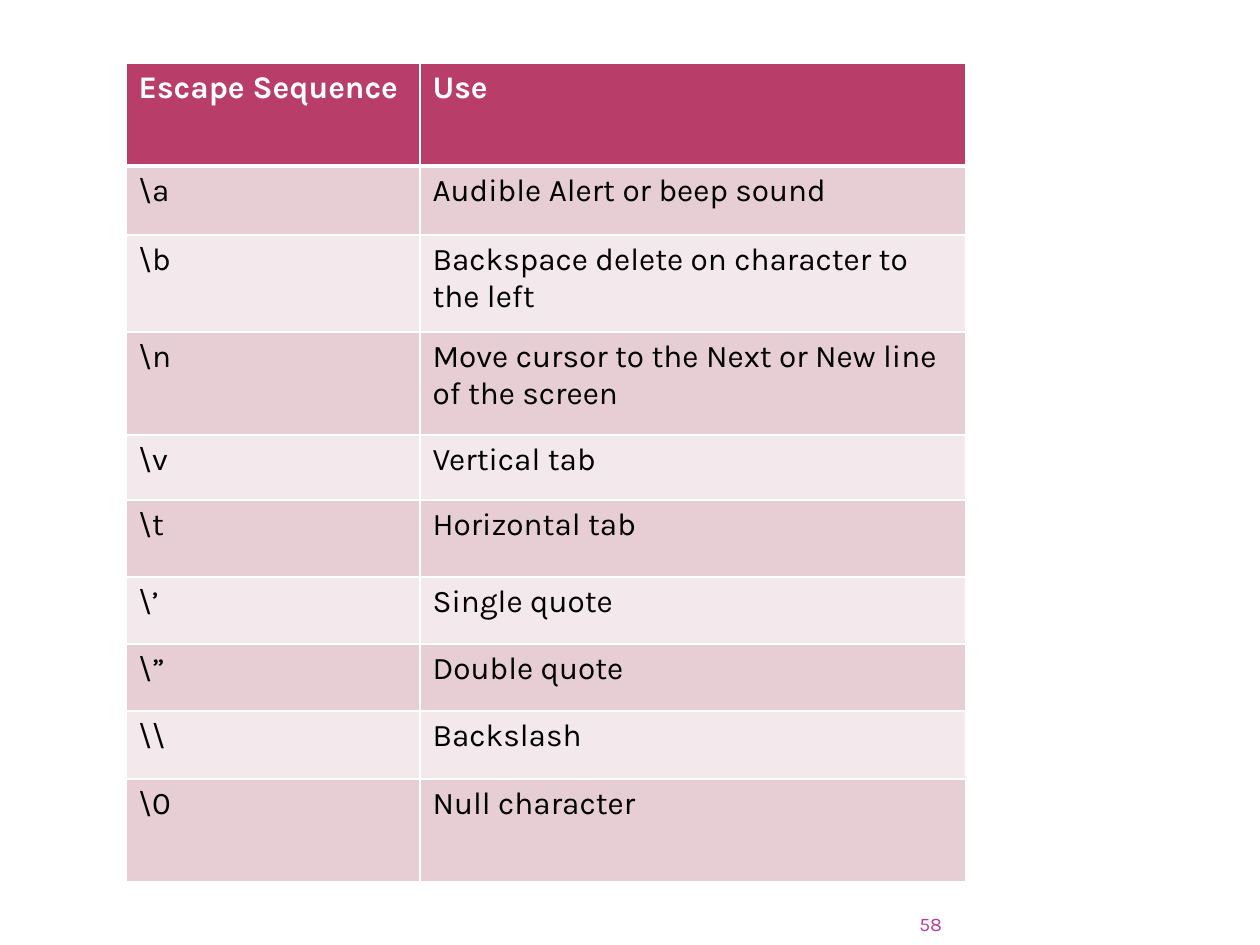
from dataclasses import dataclass

from lxml import etree
from pptx import Presentation
from pptx.dml.color import RGBColor
from pptx.enum.text import MSO_ANCHOR, PP_ALIGN
from pptx.oxml.ns import qn
from pptx.util import Pt

BOTTOM = MSO_ANCHOR.BOTTOM
RIGHT = PP_ALIGN.RIGHT
SCALE = 914400 / 126


@dataclass(frozen=True)
class Theme:
    """Colours, font and type sizes of the slide."""
    font: str = "Karla"
    head: str = "B83D68"
    bands: tuple = ("E6CED4", "F3E8EB")
    white: str = "FFFFFF"
    ink: str = "000000"
    accent: str = "B13F9A"
    body: int = 18
    small: int = 11
    thin: int = 1
    thick: int = 3


def emu(px):
    """Turn px into EMU."""
    return round(px * SCALE)


class Deck:
    """Holds the theme and the current slide."""

    def __init__(self, theme, wide, high):
        """Start a deck with one blank slide."""
        self.theme = theme
        self.file = Presentation()
        self.file.slide_width, self.file.slide_height = emu(wide), emu(high)
        self.slide = self.file.slides.add_slide(self.file.slide_layouts[6])

    def style(self, frame, size, color, bold=False):
        """Format every run of a text frame."""
        for para in frame.paragraphs:
            for run in para.runs:
                font = run.font
                font.name, font.size, font.bold = self.theme.font, Pt(size), bold
                font.color.rgb = RGBColor.from_string(color)

    def text(self, words, box, size, color):
        """Add a right-aligned text box that rests on its bottom edge."""
        frame = self.slide.shapes.add_textbox(*map(emu, box)).text_frame
        frame.margin_left = frame.margin_right = 0
        frame.margin_top = frame.margin_bottom = 0
        frame.word_wrap = True
        frame.vertical_anchor = BOTTOM
        frame.text = words
        frame.paragraphs[0].alignment = RIGHT
        self.style(frame, size, color)

    def edge(self, cell, side, width):
        """Draw one border of a cell."""
        props = cell._tc.get_or_add_tcPr()
        line = etree.SubElement(props, qn(f"a:ln{side}"), w=str(Pt(width)))
        fill = etree.SubElement(line, qn("a:solidFill"))
        etree.SubElement(fill, qn("a:srgbClr"), val=self.theme.white)

    def cell(self, cell, words, row):
        """Fill one table cell according to its row."""
        look = self.theme
        head = row == 0
        widths = {"L": look.thin, "R": look.thin,
                  "T": look.thick if row == 1 else look.thin,
                  "B": look.thick if head else look.thin}
        for side, width in widths.items():
            self.edge(cell, side, width)
        cell.fill.solid()
        tint = look.head if head else look.bands[(row - 1) % 2]
        cell.fill.fore_color.rgb = RGBColor.from_string(tint)
        cell.text_frame.text = words
        self.style(cell.text_frame, look.body, look.white if head else look.ink, head)

    def table(self, rows, left, top, cols, highs):
        """Add a banded table with a heading row."""
        box = left, top, sum(cols), sum(highs)
        grid = self.slide.shapes.add_table(len(rows), len(cols), *map(emu, box)).table
        for col, width in zip(grid.columns, cols):
            col.width = emu(width)
        for r, (row, high) in enumerate(zip(rows, highs)):
            grid.rows[r].height = emu(high)
            for c, words in enumerate(row):
                self.cell(grid.cell(r, c), words, r)


ROWS = [
    ("Escape Sequence", "Use"),
    (r"\a", "Audible Alert or beep sound"),
    (r"\b", "Backspace delete on character to the left"),
    (r"\n", "Move cursor to the Next or New line of the screen"),
    (r"\v", "Vertical tab"),
    (r"\t", "Horizontal tab"),
    (r"\’", "Single quote"),
    (r"\”", "Double quote"),
    (r"\\", "Backslash"),
    (r"\0", "Null character"),
]
HIGHS = [103, 69, 97, 103, 65, 77, 67, 67, 68, 103]


def main():
    """Build and save the slide."""
    theme = Theme()
    deck = Deck(theme, 1260, 945)
    deck.text("58", (862, 903, 80, 32), theme.small, theme.accent)
    deck.table(ROWS, 126, 63, (294, 546), HIGHS)
    deck.file.save("out.pptx")


if __name__ == "__main__":
    main()
